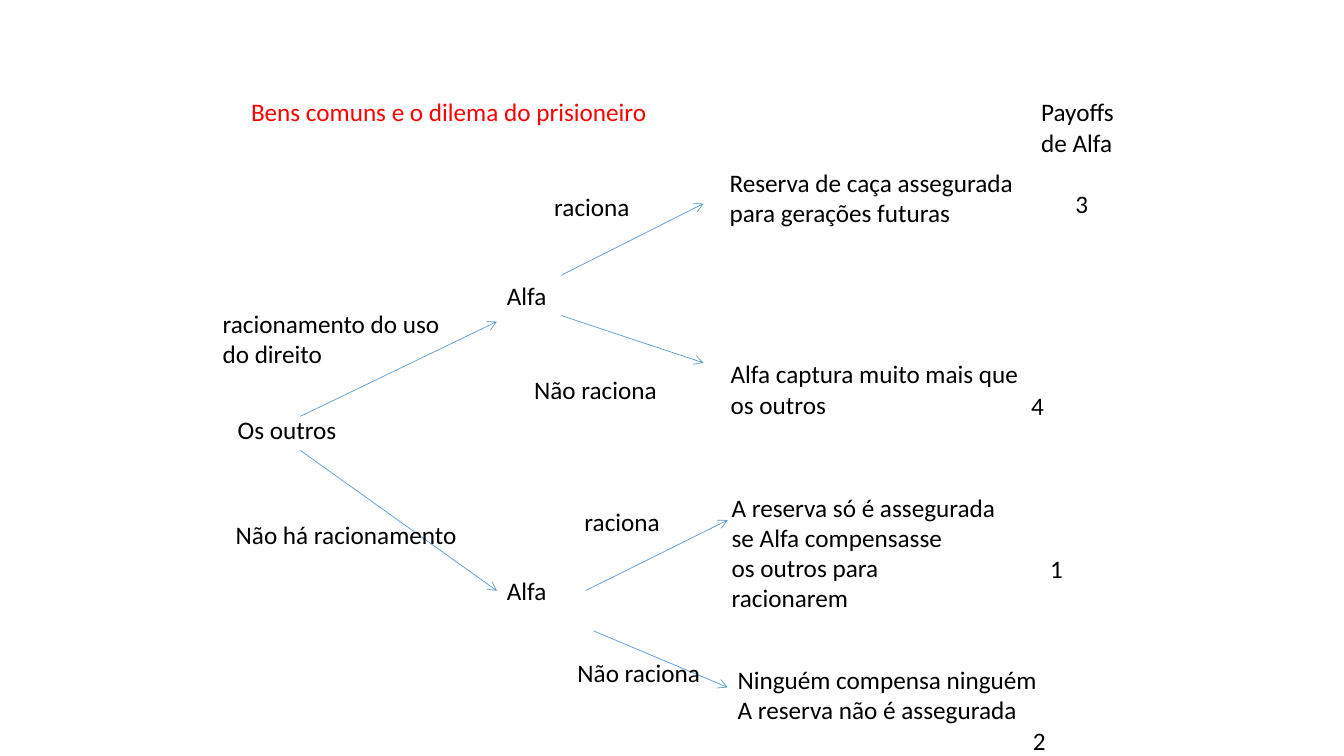
from lxml import etree
from pptx import Presentation
from pptx.dml.color import RGBColor
from pptx.enum.shapes import MSO_CONNECTOR
from pptx.enum.text import MSO_ANCHOR, PP_ALIGN
from pptx.oxml.ns import qn
from pptx.util import Pt

BLACK = RGBColor(0x00, 0x00, 0x00)
RED = RGBColor(0xFF, 0x00, 0x00)
BLUE = RGBColor(0x5B, 0x9B, 0xD5)
LINE_HEIGHT = 21.9
PAYOFF_WIDTH = 24.5

presentation = Presentation()
presentation.slide_width = Pt(960)
presentation.slide_height = Pt(540)
slide = presentation.slides.add_slide(presentation.slide_layouts[5])


def write_text(text, left, top, width, shape=None, color=BLACK):
    """Place 18 pt text in a new text box, or in the given shape."""
    lines = text.split("\n")
    place = Pt(left), Pt(top), Pt(width), Pt(7.2 + LINE_HEIGHT * len(lines))
    if shape is None:
        shape = slide.shapes.add_textbox(*place)
    else:
        shape.left, shape.top, shape.width, shape.height = place
    frame = shape.text_frame
    frame.text = text
    frame.word_wrap = False
    frame.vertical_anchor = MSO_ANCHOR.TOP
    for paragraph in frame.paragraphs:
        paragraph.alignment = PP_ALIGN.LEFT
        paragraph.font.size = Pt(18)
        paragraph.font.name = "Calibri"
        paragraph.font.color.rgb = color
    return shape


def draw_arrow(start_x, start_y, end_x, end_y):
    """Draw a thin straight branch with an open arrowhead."""
    arrow = slide.shapes.add_connector(
        MSO_CONNECTOR.STRAIGHT, Pt(start_x), Pt(start_y), Pt(end_x), Pt(end_y))
    arrow.line.color.rgb = BLUE
    arrow.line.width = Pt(0.5)
    etree.SubElement(arrow.line._get_or_add_ln(), qn("a:tailEnd"), type="arrow")
    etree.SubElement(arrow._element.spPr, qn("a:effectLst"))
    return arrow


# Title and payoff heading
write_text("Bens comuns e o dilema do prisioneiro", 172.1, 65.5, 300.2,
           shape=slide.shapes.title, color=RED)
write_text("Payoffs\nde Alfa", 736.6, 65.5, 67)

# Players
write_text("Os outros", 162.7, 292.3, 85.7)
write_text("Alfa", 355, 196.6, 43.2)
lower_alfa = write_text("Alfa", 355, 407.5, 43.2)

# Branches of the tree
draw_arrow(214.6, 297.4, 355, 229.7)
draw_arrow(214.6, 321.8, 355, 422).end_connect(lower_alfa, 1)
for branch in [
    (401, 196.6, 502.6, 145.4),
    (401, 225.4, 502.6, 259.2),
    (418.3, 421.9, 519.8, 371.5),
    (424.1, 450.7, 519.8, 491),
]:
    draw_arrow(*branch)

# Choices along the branches
for choice, left, top, width in [
    ("racionamento do uso\ndo direito", 151.9, 216.7, 171.4),
    ("Não há racionamento", 161.3, 367.2, 174.2),
    ("raciona", 388.8, 133.2, 69.1),
    ("Não raciona", 374.4, 263.5, 103),
    ("raciona", 410.4, 357.8, 69.1),
    ("Não raciona", 405.4, 465.8, 103),
]:
    write_text(choice, left, top, width)

# Outcomes, each with its payoff
for outcome, left, top, width, payoff, payoff_left, payoff_top in [
    ("Reserva de caça assegurada\npara gerações futuras",
     514.1, 115.9, 218.9, "3", 761, 131),
    ("Alfa captura muito mais que\nos outros",
     514.8, 252.7, 220, "4", 729.4, 275),
    ("A reserva só é assegurada\nse Alfa compensasse\nos outros para racionarem",
     515.5, 347.8, 206, "1", 743, 391.5),
    ("Ninguém compensa ninguém\nA reserva não é assegurada",
     519.8, 470.9, 228, "2", 730.8, 514.8),
]:
    write_text(outcome, left, top, width)
    write_text(payoff, payoff_left, payoff_top, PAYOFF_WIDTH)

presentation.save("out.pptx")
